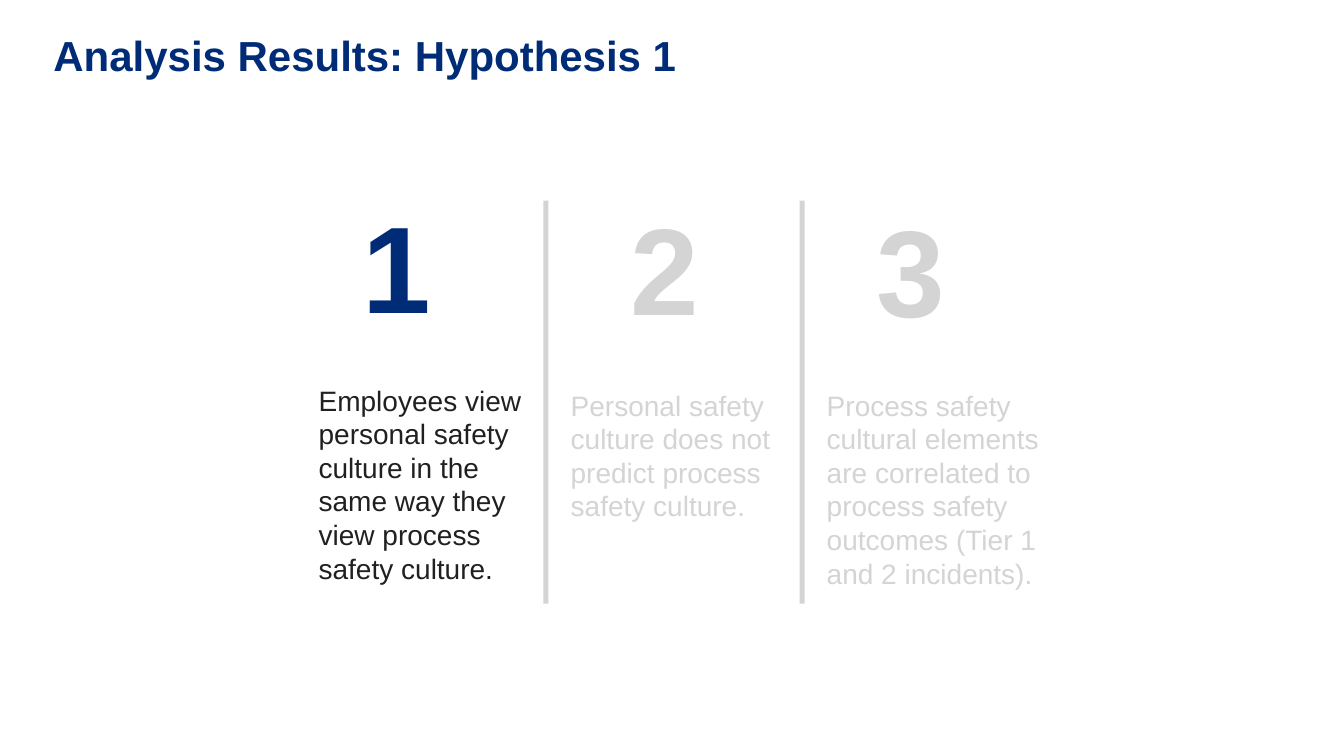
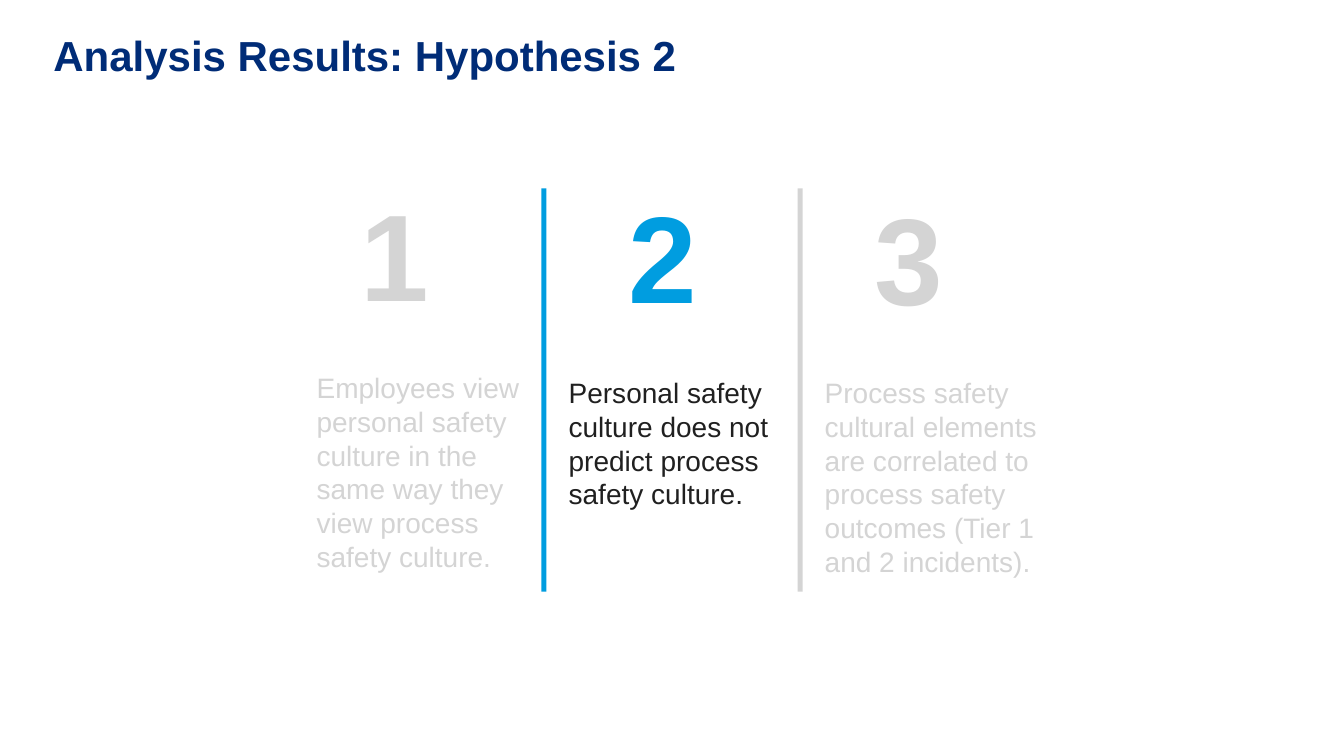
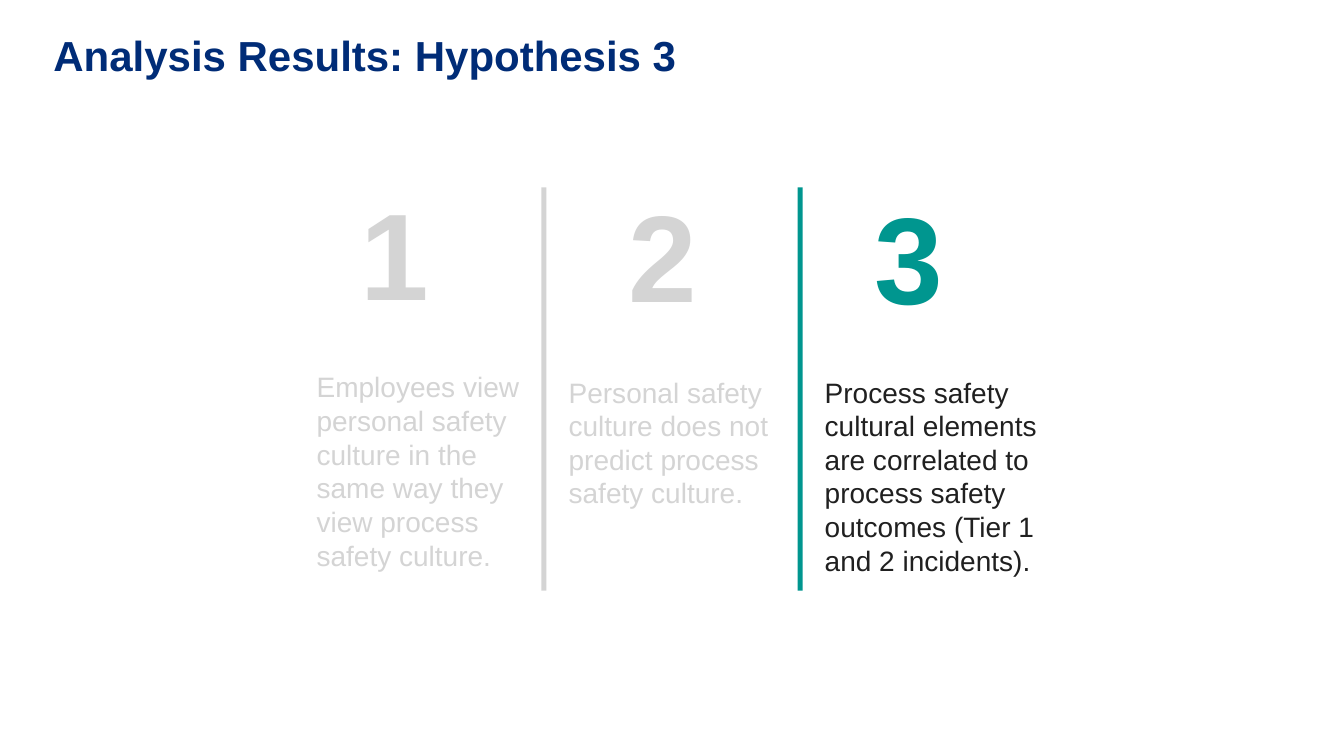
from pptx import Presentation
from pptx.dml.color import RGBColor
from pptx.enum.shapes import MSO_SHAPE
from pptx.util import Inches, Pt

RECT = MSO_SHAPE.RECTANGLE
FONT = "Arial"
COLORS = {
    "navy": "002C77",
    "blue": "009DE0",
    "teal": "00968F",
    "ink": "202020",
    "muted": "D4D4D4",
}

HYPOTHESES = [
    {"text": "Employees view personal safety culture in the same way they view process safety culture.",
     "accent": "navy", "number_at": (0.71, -0.10), "text_top": 1.54},
    {"text": "Personal safety culture does not predict process safety culture.",
     "accent": "blue", "number_at": (0.86, -0.08), "text_top": 1.59},
    {"text": "Process safety cultural elements are correlated to process safety outcomes (Tier 1 and 2 incidents).",
     "accent": "teal", "number_at": (0.76, -0.06), "text_top": 1.59},
]
# Left and top of the three columns on each slide
ORIGINS = [(2.89, 1.99), (2.87, 1.87), (2.87, 1.86)]
COLUMN_OFFSETS = [0, 2.5, 5.04]
TEXT_W, TEXT_H, TEXT_INSET = 2.7, 2.78, 0.27
NUMBER_W, NUMBER_H = 0.69, 1.48
DIVIDER_W, DIVIDER_H = 0.05, 4


def rgb(name):
    return RGBColor.from_string(COLORS[name])


def add_text(slide, text, left, top, width, height, size, color,
             bold=False, inset=0, wrap=True, spacing=None):
    box = slide.shapes.add_textbox(*map(Inches, (left, top, width, height)))
    tf = box.text_frame
    tf.word_wrap = wrap
    tf.margin_left = tf.margin_top = tf.margin_right = tf.margin_bottom = Inches(inset)
    p = tf.paragraphs[0]
    p.text = text
    p.line_spacing = spacing
    p.font.name, p.font.size, p.font.bold = FONT, Pt(size), bold
    p.font.color.rgb = rgb(color)


def add_divider(slide, left, top, color):
    sp = slide.shapes.add_shape(RECT, *map(Inches, (left, top, DIVIDER_W, DIVIDER_H)))
    sp.shadow.inherit = False
    sp.fill.solid()
    sp.fill.fore_color.rgb = rgb(color)
    sp.line.fill.background()


def add_hypothesis_slide(prs, active, origin):
    """Show all hypotheses, with only the active one in colour."""
    slide = prs.slides.add_slide(prs.slide_layouts[6])
    add_text(slide, f"Analysis Results: Hypothesis {active + 1}",
             0.53, 0.39, 12.27, 0.54, 30, "navy", bold=True, spacing=0.8)
    left, top = origin
    for i, (item, offset) in enumerate(zip(HYPOTHESES, COLUMN_OFFSETS)):
        x = left + offset
        accent, ink = (item["accent"], "ink") if i == active else ("muted", "muted")
        if i:
            add_divider(slide, x, top, accent)
        dx, dy = item["number_at"]
        add_text(slide, str(i + 1), x + dx, top + dy, NUMBER_W, NUMBER_H,
                 88, accent, bold=True, wrap=False)
        add_text(slide, item["text"], x, top + item["text_top"], TEXT_W, TEXT_H,
                 20, ink, inset=TEXT_INSET)


def main():
    prs = Presentation()
    prs.slide_width, prs.slide_height = Inches(13.33), Inches(7.5)
    for active, origin in enumerate(ORIGINS):
        add_hypothesis_slide(prs, active, origin)
    prs.save("out.pptx")


if __name__ == "__main__":
    main()
